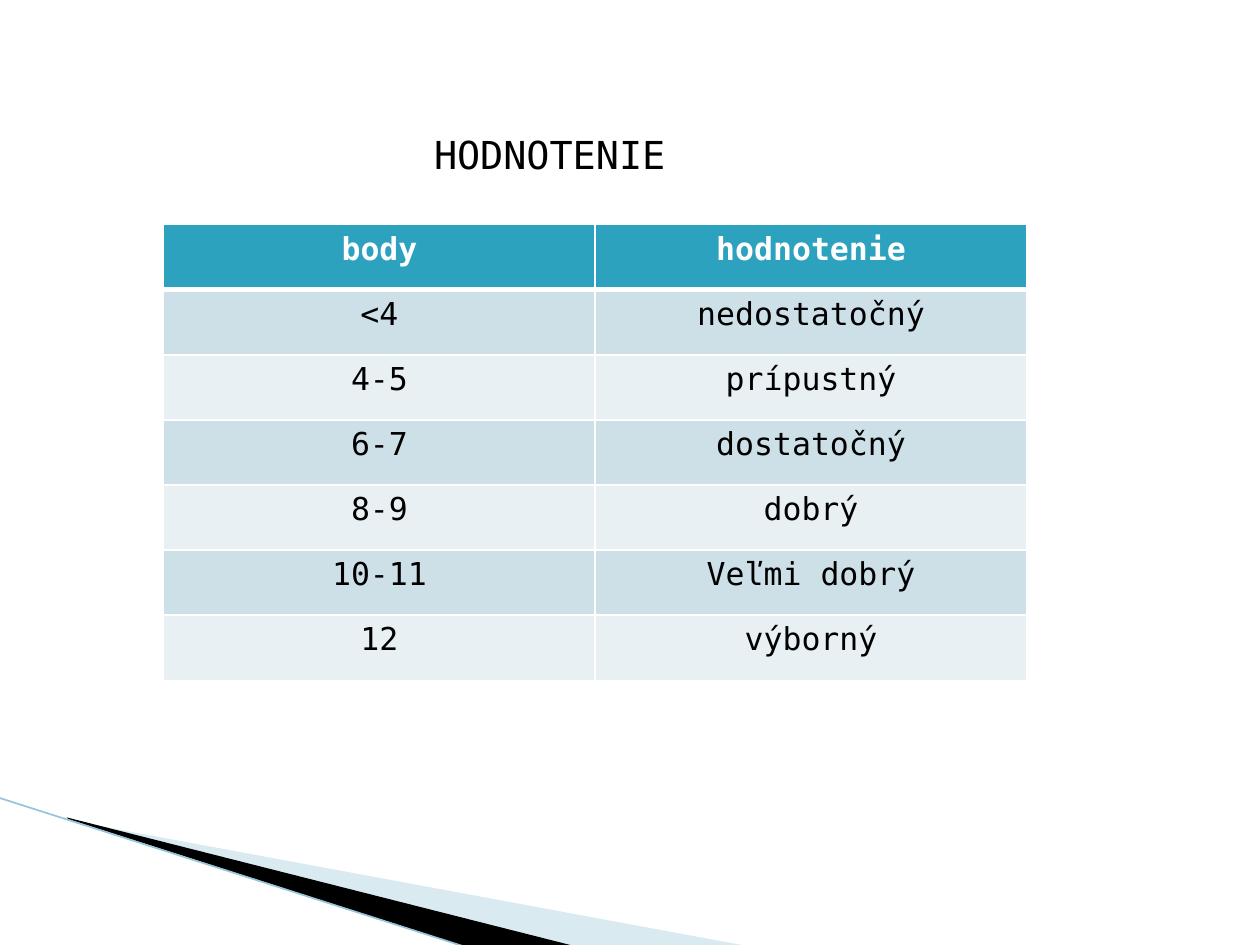
from dataclasses import dataclass

from lxml import etree
from pptx import Presentation
from pptx import util as u
from pptx.dml.color import RGBColor
from pptx.enum import shapes, text
from pptx.oxml import ns


@dataclass(frozen=True)
class Theme:
    """Colours, font and type sizes of the deck."""
    font: str = "DejaVu Sans Mono"
    title_size: int = 22
    table_size: int = 18
    ink: str = "000000"
    white: str = "FFFFFF"
    header: str = "2DA2BF"
    bands: tuple = ("CDE0E8", "E8F0F4")
    wedge: str = "A0CBDC"
    edge: str = "97C5D8"


THEME = Theme()
GRADES = [
    ("body", "hodnotenie"),
    ("<4", "nedostatočný"),
    ("4-5", "prípustný"),
    ("6-7", "dostatočný"),
    ("8-9", "dobrý"),
    ("10-11", "Veľmi dobrý"),
    ("12", "výborný"),
]


def add_child(parent, tag, **attributes):
    """Append a DrawingML element and return it."""
    return etree.SubElement(parent, ns.qn(tag), attributes)


def style_font(para, size, colour, bold=False):
    """Set the font of a whole paragraph."""
    font = para.font
    font.name = THEME.font
    font.size = u.Pt(size)
    font.bold = bold
    font.color.rgb = RGBColor.from_string(colour)


def add_wedge(page, points, colour, opacity=None):
    """Draw a filled outline through points given in centimetres."""
    corners = [(u.Cm(x), u.Cm(y)) for x, y in points]
    builder = page.shapes.build_freeform(*corners[0])
    builder.add_line_segments(corners[1:], close=True)
    wedge = builder.convert_to_shape()
    wedge.shadow.inherit = False
    wedge.line.fill.background()
    wedge.fill.solid()
    wedge.fill.fore_color.rgb = RGBColor.from_string(colour)
    if opacity is not None:
        solid = wedge.fill._xPr.find(ns.qn("a:solidFill"))
        add_child(solid[0], "a:alpha", val=str(opacity * 1000))


def add_edge(page, start, end):
    """Draw the thin line along the wedges."""
    edge = page.shapes.add_connector(
        shapes.MSO_CONNECTOR.STRAIGHT, *map(u.Cm, start + end))
    edge.line.color.rgb = RGBColor.from_string(THEME.edge)
    edge.line.width = u.Pt(0.95)
    add_child(edge._element.spPr, "a:effectLst")


def add_borders(cell, bottom):
    """Give a cell white borders, the bottom one of its own width."""
    properties = cell._tc.get_or_add_tcPr()
    for side, width in (("L", 1), ("R", 1), ("T", 1), ("B", bottom)):
        line = add_child(properties, f"a:ln{side}", w=str(u.Pt(width)))
        add_child(add_child(line, "a:solidFill"), "a:srgbClr", val=THEME.white)


def fill_cell(cell, words, row):
    """Write and colour one cell according to its row."""
    is_header = row == 0
    add_borders(cell, bottom=3 if is_header else 1)
    cell.fill.solid()
    colour = THEME.header if is_header else THEME.bands[(row - 1) % 2]
    cell.fill.fore_color.rgb = RGBColor.from_string(colour)
    cell.text = words
    para = cell.text_frame.paragraphs[0]
    para.alignment = text.PP_ALIGN.CENTER
    style_font(para, THEME.table_size,
               THEME.white if is_header else THEME.ink, bold=is_header)


def add_grades(page):
    """Add the table of points and grades."""
    frame = page.shapes.add_table(len(GRADES), len(GRADES[0]), u.Cm(3.3),
                                  u.Cm(4.53), u.Cm(17.4), u.Cm(9.19))
    for row, entries in enumerate(GRADES):
        for column, words in enumerate(entries):
            fill_cell(frame.table.cell(row, column), words, row)


def add_title(page, words):
    """Add the title above the table."""
    box = page.shapes.add_textbox(u.Cm(8.5), u.Cm(2.51), u.Cm(5.61), u.Cm(1.19))
    box.text_frame.word_wrap = False
    box.text_frame.auto_size = text.MSO_AUTO_SIZE.SHAPE_TO_FIT_TEXT
    para = box.text_frame.paragraphs[0]
    para.text = words
    style_font(para, THEME.title_size, THEME.ink)


def main():
    """Build the slide and save the deck."""
    deck = Presentation()
    deck.slide_width, deck.slide_height = u.Cm(25.4), u.Cm(19.05)
    page = deck.slides.add_slide(deck.slide_layouts[6])
    add_wedge(page, [(1.4, 16.54), (15.11, 19.08), (11.58, 19.08), (1.4, 16.51)],
              THEME.wedge, opacity=40)
    add_wedge(page, [(1.35, 16.48), (11.61, 19.08), (9.45, 19.1), (1.37, 16.51)],
              THEME.ink)
    add_edge(page, (-0.03, 16.08), (9.42, 19.1))
    add_grades(page)
    add_title(page, "HODNOTENIE")
    deck.save("out.pptx")


if __name__ == "__main__":
    main()
